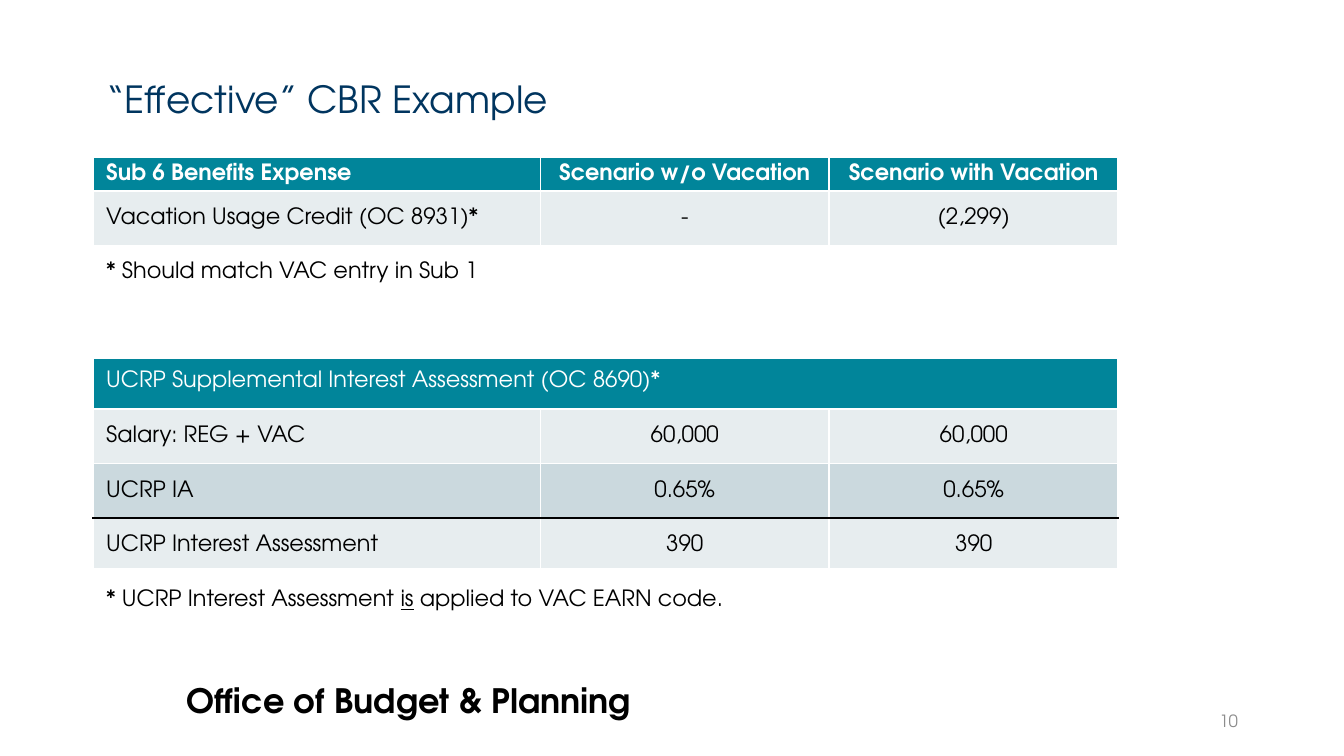
from dataclasses import dataclass

from lxml import etree
from pptx import Presentation
from pptx import util as u
from pptx.dml.color import RGBColor
from pptx.enum import text
from pptx.oxml import ns

FONT = "TeX Gyre Adventor"
HEX = {
    "navy": "00355F", "teal": "01859A", "pale": "E7EDEF", "mist": "CBD9DE",
    "white": "FFFFFF", "black": "000000", "gray": "8C8C8C",
}
LEFT, MID, RIGHT = text.PP_ALIGN.LEFT, text.PP_ALIGN.CENTER, text.PP_ALIGN.RIGHT


@dataclass
class Run:
    words: str
    bold: bool = False
    under: bool = False


@dataclass
class Row:
    cells: list[list[Run]]
    fill: str | None = None
    ink: str = "black"
    span: bool = False


@dataclass
class Edge:
    width: float = 1
    color: str = "white"


def plain(*words: str, bold: bool = False) -> list[list[Run]]:
    return [[Run(word, bold)] for word in words]


def write(frame, runs: list[Run], size: float, ink: str, align=LEFT) -> None:
    para = frame.paragraphs[0]
    para.alignment = align
    for item in runs:
        run = para.add_run()
        run.text = item.words
        font = run.font
        font.name, font.size = FONT, u.Pt(size)
        font.bold, font.underline = item.bold, item.under
        font.color.rgb = RGBColor.from_string(HEX[ink])


def add_label(slide, box: tuple, runs: list[Run], size: float, ink: str,
              align=LEFT, anchor=text.MSO_ANCHOR.TOP) -> None:
    frame = slide.shapes.add_textbox(*map(u.Inches, box)).text_frame
    frame.word_wrap = True
    frame.vertical_anchor = anchor
    write(frame, runs, size, ink, align)


def add_edge(cell, side: str, edge: Edge) -> None:
    props = cell._tc.get_or_add_tcPr()
    line = etree.SubElement(props, ns.qn(f"a:ln{side}"), w=str(u.Pt(edge.width)))
    fill = etree.SubElement(line, ns.qn("a:solidFill"))
    etree.SubElement(fill, ns.qn("a:srgbClr"), val=HEX[edge.color])


def draw_row(table, num: int, row: Row, top: Edge, low: Edge) -> None:
    for col, cell in enumerate(table.rows[num].cells):
        for side, edge in zip("LRTB", (Edge(), Edge(), top, low)):
            add_edge(cell, side, edge)
        if row.fill:
            cell.fill.solid()
            cell.fill.fore_color.rgb = RGBColor.from_string(HEX[row.fill])
        else:
            cell.fill.background()
        cell.margin_top = cell.margin_bottom = 0
        cell.vertical_anchor = text.MSO_ANCHOR.MIDDLE
        if col < len(row.cells):
            write(cell.text_frame, row.cells[col], 12, row.ink, MID if col else LEFT)
    if row.span:
        table.cell(num, 0).merge(table.cell(num, len(table.columns) - 1))


ROWS = [
    Row(plain("Sub 6 Benefits Expense", "Scenario w/o Vacation",
              "Scenario with Vacation", bold=True), "teal", "white"),
    Row(plain("Vacation Usage Credit (OC 8931)*", "-", "(2,299)"), "pale"),
    Row(plain("* Should match VAC entry in Sub 1")),
    Row([]),
    Row(plain("UCRP Supplemental Interest Assessment (OC 8690)*"),
        "teal", "white", span=True),
    Row(plain("Salary: REG + VAC", "60,000", "60,000"), "pale"),
    Row(plain("UCRP IA", "0.65%", "0.65%"), "mist"),
    Row(plain("UCRP Interest Assessment", "390", "390"), "pale"),
    Row([[Run("* UCRP Interest Assessment "), Run("is", under=True),
          Run(" applied to VAC EARN code.")]], span=True),
]
# Special rules below a row; all other edges are thin and white
RULES = {0: Edge(1.5), 3: Edge(6), 6: Edge(1, "black"), 7: Edge(6)}
WIDTHS = (3.33, 2.15, 2.15)
HEAD, BODY = 0.25, 3.25
STEP = BODY / (len(ROWS) - 1)


def add_grid(slide) -> None:
    box = map(u.Inches, (0.69, 1.17, sum(WIDTHS), HEAD + BODY))
    table = slide.shapes.add_table(len(ROWS), len(WIDTHS), *box).table
    table.first_row = table.horz_banding = False
    for col, width in zip(table.columns, WIDTHS):
        col.width = u.Inches(width)
    for num, row in enumerate(ROWS):
        table.rows[num].height = u.Inches(STEP if num else HEAD)
        draw_row(table, num, row, RULES.get(num - 1, Edge()), RULES.get(num, Edge()))


def main() -> None:
    # Widescreen page, 16 by 9
    deck = Presentation()
    deck.slide_width = u.Inches(10)
    deck.slide_height = deck.slide_width * 9 // 16
    slide = deck.slides.add_slide(deck.slide_layouts[5])

    # Title
    title = slide.shapes.title
    title.left, title.top = u.Inches(0.69), u.Inches(0.5)
    title.width, title.height = u.Inches(6.47), u.Inches(0.51)
    title.text_frame.vertical_anchor = text.MSO_ANCHOR.MIDDLE
    write(title.text_frame, [Run("“Effective” CBR Example")], 20, "navy")
    title.text_frame.paragraphs[0].line_spacing = 0.9

    # Benefits table
    add_grid(slide)

    # Footer and page number
    add_label(slide, (1.29, 5.01, 4.35, 0.4),
              [Run("Office of Budget & Planning", bold=True)], 18, "black")
    add_label(slide, (7.06, 5.21, 2.25, 0.3), [Run("10")], 9, "gray",
              RIGHT, text.MSO_ANCHOR.MIDDLE)

    deck.save("out.pptx")


if __name__ == "__main__":
    main()
